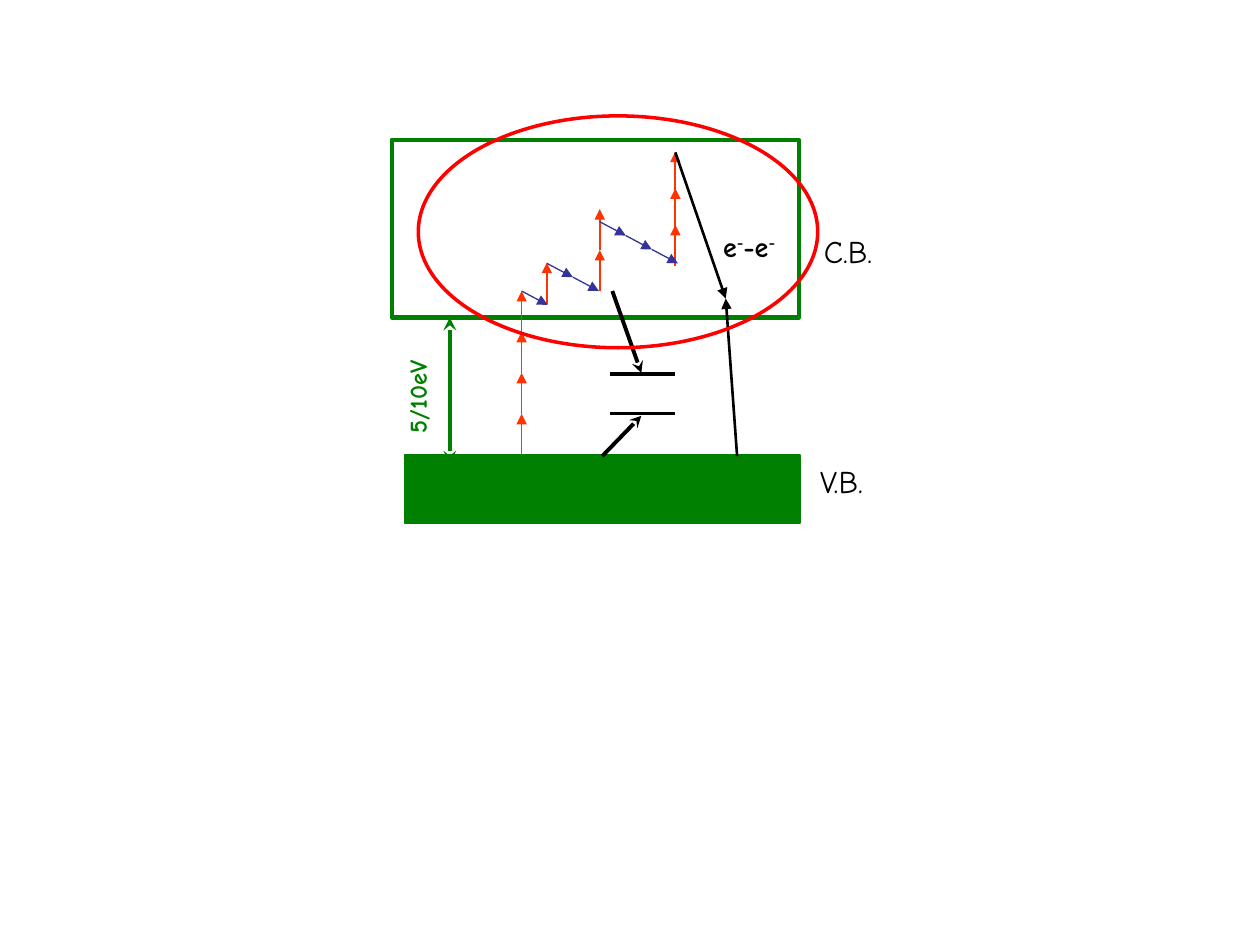
from lxml import etree
from pptx import Presentation
from pptx.dml.color import RGBColor
from pptx.enum.shapes import MSO_CONNECTOR, MSO_SHAPE as SHAPE
from pptx.enum.text import MSO_AUTO_SIZE as AUTO_SIZE
from pptx.oxml.ns import qn
from pptx.util import Inches, Pt

GREEN, ORANGE, RED, BLUE, BLACK = "008000", "FF3300", "FF0000", "333399", "000000"
color = RGBColor.from_string

deck = Presentation()
deck.slide_width, deck.slide_height = Inches(10), Inches(7.5)
page = deck.slides.add_slide(deck.slide_layouts[6])


def add_line(start, end, stroke, width, head=None, tail=None):
    line = page.shapes.add_connector(
        MSO_CONNECTOR.STRAIGHT, *[Inches(value) for value in (*start, *end)])
    line.line.color.rgb = color(stroke)
    line.line.width = Pt(width)
    outline = line.line._get_or_add_ln()
    for tag, kind in (("a:headEnd", head), ("a:tailEnd", tail)):
        if kind:
            etree.SubElement(outline, qn(tag), type=kind)
    etree.SubElement(line._element.spPr, qn("a:effectLst"))


def add_outline(kind, bounds, stroke, width, fill=None):
    shape = page.shapes.add_shape(kind, *[Inches(value) for value in bounds])
    shape.shadow.inherit = False
    shape.line.color.rgb = color(stroke)
    shape.line.width = Pt(width)
    if fill:
        shape.fill.solid()
        shape.fill.fore_color.rgb = color(fill)
    else:
        shape.fill.background()


# Valence and conduction bands
add_outline(SHAPE.RECTANGLE, (3.21, 3.61, 3.14, 0.54), GREEN, 1, GREEN)
add_outline(SHAPE.RECTANGLE, (3.11, 1.11, 3.23, 1.41), GREEN, 2.5)

# Photon absorption: x, lowest start, arrow count, spacing
for x, bottom, count, spacing in [(4.14, 3.61, 4, 0.325), (4.34, 2.41, 1, 0.325),
                                  (4.76, 2.31, 2, 0.325), (5.36, 2.11, 3, 0.29)]:
    for step in range(count):
        start = bottom - step * spacing
        add_line((x, start), (x, start - 0.325), ORANGE, 1, tail="triangle")

# Relaxation: start of each chain, arrow count
run_x, drop_y = 0.207, 0.11
for x, y, count in [(4.14, 2.31, 1), (4.34, 2.09, 2), (4.76, 1.76, 3)]:
    for step in range(count):
        add_line((x + step * run_x, y + step * drop_y),
                 (x + (step + 1) * run_x, y + (step + 1) * drop_y),
                 BLUE, 0.75, tail="triangle")

# Band gap
add_line((3.57, 2.52), (3.57, 3.68), GREEN, 2.5, head="stealth", tail="stealth")

# Electron-electron collision
for start in [(5.85, 3.62), (5.36, 1.21)]:
    add_line(start, (5.76, 2.37), BLACK, 1.5, tail="triangle")

# Trapping into the two gap levels
for start, end in [((4.86, 2.31), (5.09, 2.96)), ((4.78, 3.62), (5.09, 3.3))]:
    add_line(start, end, BLACK, 2.25, tail="stealth")
for y in (2.97, 3.28):
    add_line((4.84, y), (5.36, y), BLACK, 2)

# Labels: bounds, runs with superscript flag, size, colour, bold, rotation
labels = [
    ((6.41, 3.62, 0.65, 0.4), [("V.B.", False)], 18, BLACK, False, 0),
    ((6.44, 1.79, 0.64, 0.4), [("C.B.", False)], 18, BLACK, False, 0),
    ((2.82, 2.82, 1.04, 0.39), [("5/10eV", False)], 14, GREEN, True, 270),
    ((5.64, 1.77, 0.91, 0.43),
     [("e", False), ("-", True), ("-e", False), ("-", True)], 16, BLACK, True, 0),
]
for bounds, spans, size, ink, bold, rotation in labels:
    box = page.shapes.add_textbox(*[Inches(value) for value in bounds])
    box.rotation = rotation
    box.text_frame.word_wrap = False
    box.text_frame.auto_size = AUTO_SIZE.SHAPE_TO_FIT_TEXT
    para = box.text_frame.paragraphs[0]
    para.font.name, para.font.size, para.font.bold = "Comic Neue", Pt(size), bold
    para.font.color.rgb = color(ink)
    for text, raised in spans:
        span = para.add_run()
        span.text = text
        if raised:
            span._r.get_or_add_rPr().set("baseline", "30000")

# Highlighted region
add_outline(SHAPE.OVAL, (3.32, 0.92, 3.17, 1.84), RED, 2)

deck.save("out.pptx")
